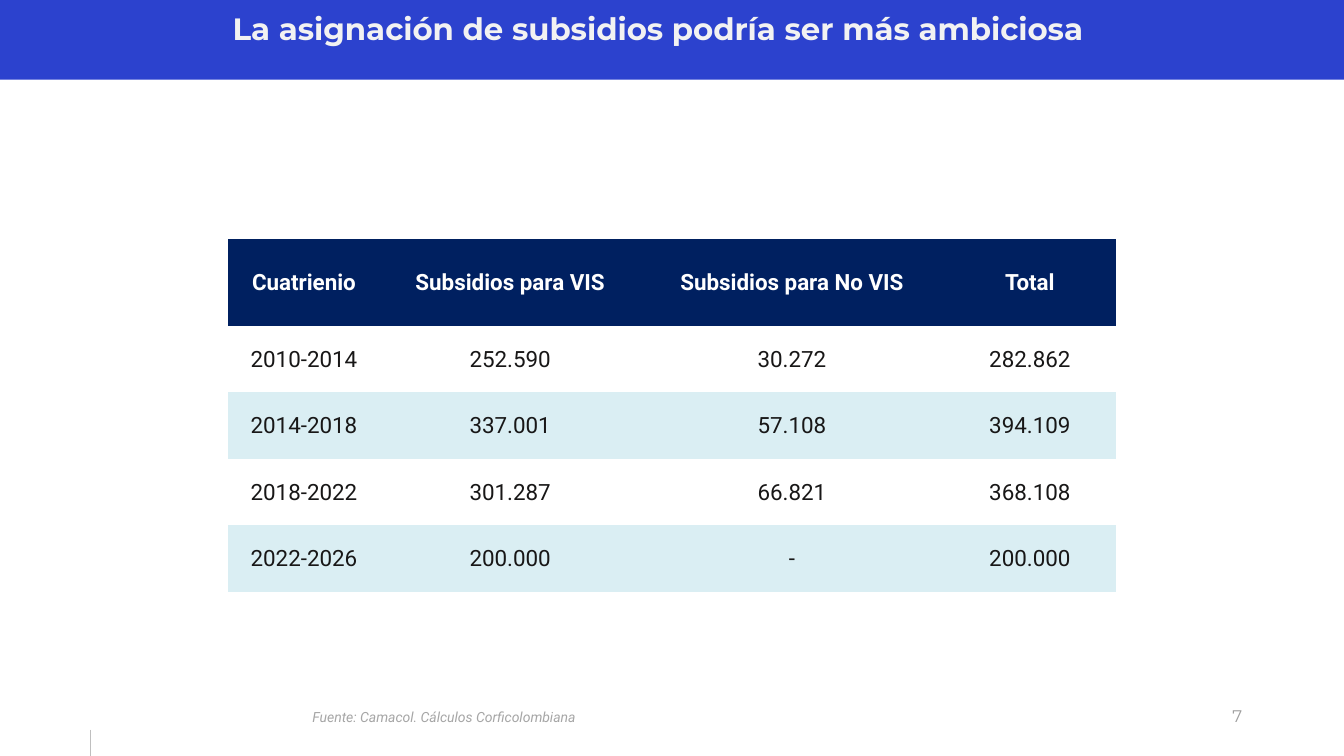
from dataclasses import dataclass

from pptx import Presentation
from pptx.dml.color import RGBColor as Rgb
from pptx.enum.shapes import MSO_CONNECTOR as Link, MSO_SHAPE as Form
from pptx.enum.text import MSO_ANCHOR as Anchor, MSO_AUTO_SIZE as Fit, PP_ALIGN as Align
from pptx.oxml.ns import qn
from pptx.oxml.xmlchemy import OxmlElement as Node
from pptx.util import Emu, Pt

SCALE = 9144
PLAIN = "{2D5ABB26-0587-4C30-8999-92F81FD0307C}"


@dataclass(frozen=True)
class Theme:
    """Colours, fonts and type sizes of the slide."""
    band: str = "2C42CE"
    title: str = "F2F2F2"
    head: str = "002060"
    white: str = "FFFFFF"
    stripe: str = "DAEEF3"
    ink: str = "181717"
    rule: str = "BFBFBF"
    page: str = "9E9E9E"
    note: str = "A6A6A6"
    brand: str = "Montserrat"
    body: str = "Roboto"
    big: int = 22
    mid: int = 16
    low: int = 12
    tiny: int = 10


LOOK = Theme()
ROWS = [
    ("Cuatrienio", "Subsidios para VIS", "Subsidios para No VIS", "Total"),
    ("2010-2014", "252.590", "30.272", "282.862"),
    ("2014-2018", "337.001", "57.108", "394.109"),
    ("2018-2022", "301.287", "66.821", "368.108"),
    ("2022-2026", "200.000", "-", "200.000"),
]
WIDTHS = (151, 258, 301, 171)
HEIGHTS = (86, 66, 66, 66, 66)


def px(*nums):
    """Turn px lengths into EMU."""
    return [Emu(num * SCALE) for num in nums]


def write(frame, text, size, color, font=LOOK.body, bold=False, slant=False,
          align=Align.LEFT):
    """Put one formatted paragraph into a text frame."""
    para = frame.paragraphs[0]
    para.text = text
    para.alignment = align
    face = para.font
    face.name, face.size = font, Pt(size)
    face.bold, face.italic = bold, slant
    face.color.rgb = Rgb.from_string(color)


def label(slide, box, text, **form):
    """Add a wrapped text box."""
    frame = slide.shapes.add_textbox(*px(*box)).text_frame
    frame.word_wrap = True
    write(frame, text, **form)


def header(slide, box, text):
    """Draw the colour band and set the title on it."""
    left, top, width, height = box
    band = slide.shapes.add_shape(Form.RECTANGLE, *px(*box))
    band.shadow.inherit = False
    band.fill.solid()
    band.fill.fore_color.rgb = Rgb.from_string(LOOK.band)
    band.line.fill.background()
    title = slide.shapes.title
    title.element.getparent().append(title.element)
    title.left, title.top, title.width, title.height = px(
        left + 50, top, width - 128, height - 3)
    frame = title.text_frame
    frame.auto_size, frame.word_wrap = Fit.NONE, True
    frame.vertical_anchor = Anchor.TOP
    frame.margin_left, frame.margin_top, frame.margin_right, frame.margin_bottom = px(
        10, 10, 10, 10)
    write(frame, text, size=LOOK.big, color=LOOK.title, font=LOOK.brand,
          bold=True, align=Align.CENTER)


def grid(slide, box, rows):
    """Draw the striped table of subsidies."""
    frame = slide.shapes.add_table(len(rows), len(WIDTHS), *px(*box))
    table = frame.table
    table.first_row = table.horz_banding = False
    for style in frame.element.iter(qn("a:tableStyleId")):
        style.text = PLAIN
    for col, width in zip(table.columns, px(*WIDTHS)):
        col.width = width
    for row, height in zip(table.rows, px(*HEIGHTS)):
        row.height = height
    for i, texts in enumerate(rows):
        top = i == 0
        for j, text in enumerate(texts):
            cell = table.cell(i, j)
            cell.vertical_anchor = Anchor.MIDDLE
            cell.margin_left, cell.margin_top, cell.margin_right, cell.margin_bottom = px(
                1, 1, 1, 0)
            if i % 2:
                cell.fill.background()
            else:
                cell.fill.solid()
                cell.fill.fore_color.rgb = Rgb.from_string(
                    LOOK.head if top else LOOK.stripe)
            write(cell.text_frame, text, size=LOOK.mid, bold=top,
                  color=LOOK.white if top else LOOK.ink, align=Align.CENTER)


def footer(slide, box, source, page):
    """Place the source, the page number and the short rule."""
    left, top, width, height = box
    rule = slide.shapes.add_connector(
        Link.STRAIGHT, *px(left + 90, top + 29, left + 90, top + height))
    rule.line.color.rgb = Rgb.from_string(LOOK.rule)
    rule.line.width = Pt(1)
    rule.element.spPr.append(Node("a:effectLst"))
    label(slide, (left + width - 391, top, 300, 40), page, size=LOOK.low,
          color=LOOK.page, font=LOOK.brand, align=Align.RIGHT)
    label(slide, (left + 300, top + 3, 843, 27), source, size=LOOK.tiny,
          color=LOOK.note, slant=True)


def main():
    """Build and save the slide."""
    deck = Presentation()
    deck.slide_width, deck.slide_height = px(1333, 750)
    slide = deck.slides.add_slide(deck.slide_layouts.get_by_name("Title Only"))
    header(slide, (0, 0, 1333, 79),
           "La asignación de subsidios podría ser más ambiciosa")
    grid(slide, (226, 237, sum(WIDTHS), sum(HEIGHTS)), ROWS)
    footer(slide, (0, 695, 1333, 55),
           "Fuente: Camacol. Cálculos Corficolombiana", "7")
    deck.save("out.pptx")


if __name__ == "__main__":
    main()
